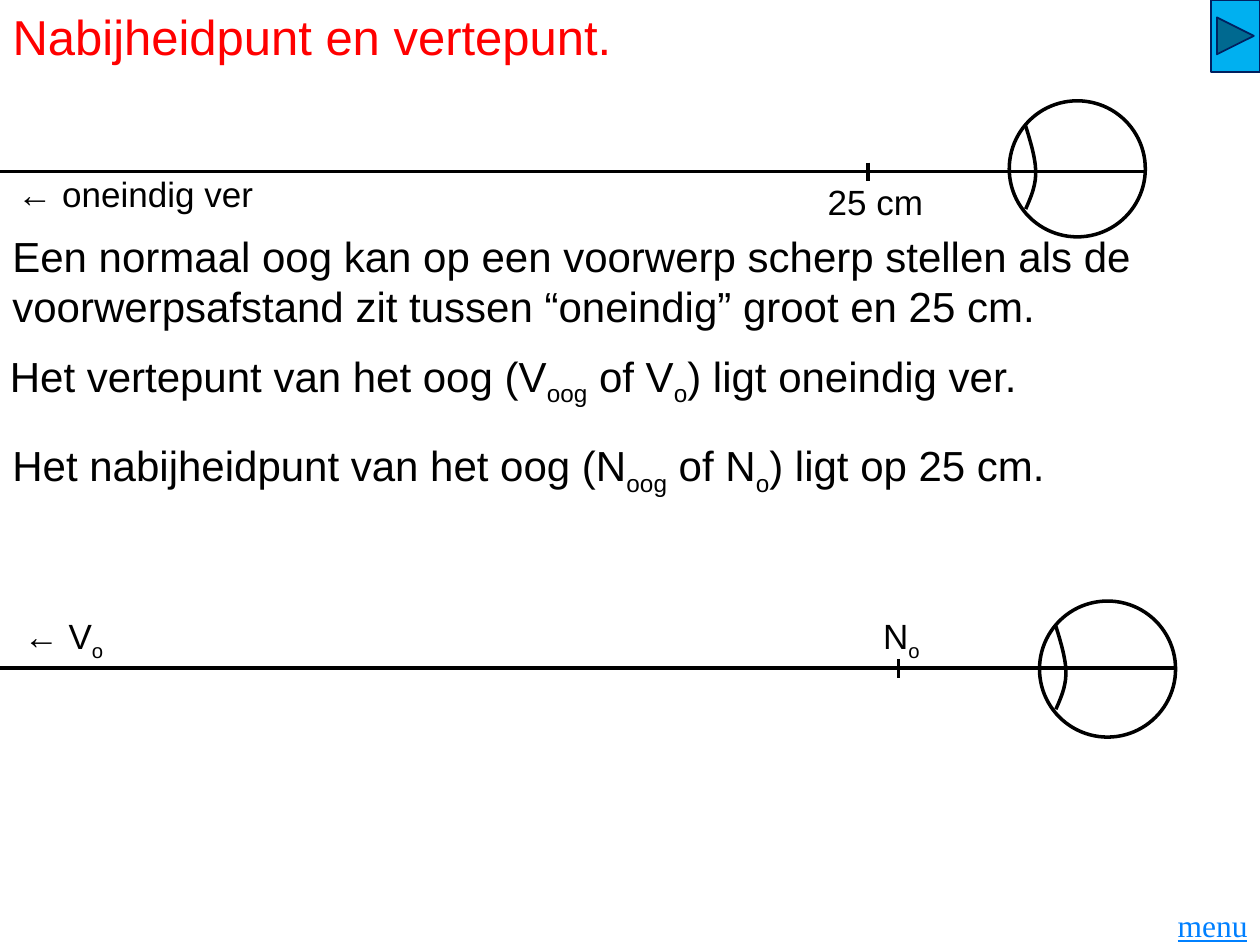
from lxml import etree
from pptx import Presentation
from pptx.dml.color import RGBColor
from pptx.enum.shapes import MSO_CONNECTOR, MSO_SHAPE
from pptx.enum.text import MSO_ANCHOR, MSO_AUTO_SIZE, PP_ALIGN
from pptx.oxml.ns import qn
from pptx.util import Inches, Pt

STRAIGHT = MSO_CONNECTOR.STRAIGHT
OVAL = MSO_SHAPE.OVAL
FORWARD_BUTTON = MSO_SHAPE.ACTION_BUTTON_FORWARD_OR_NEXT
TOP = MSO_ANCHOR.TOP
LEFT, RIGHT = PP_ALIGN.LEFT, PP_ALIGN.RIGHT
GROW, NO_FIT = MSO_AUTO_SIZE.SHAPE_TO_FIT_TEXT, MSO_AUTO_SIZE.NONE

BLACK = RGBColor(0, 0, 0)
RED = RGBColor(0xFF, 0, 0)
LINK_BLUE = RGBColor(0, 0x80, 0xFF)
BUTTON_BLUE = RGBColor(0, 0xB0, 0xF0)
NAVY = RGBColor(0, 0x20, 0x60)

EYE_SIZE = 1.08
LENS_CURVES = [
    [(0, 0), (0.04, 0.13), (0.08, 0.26), (0.08, 0.37)],
    [(0.08, 0.37), (0.08, 0.48), (0.04, 0.57), (0, 0.66)],
]
CURVE_STEPS = 12


def place(shape, box):
    shape.left, shape.top, shape.width, shape.height = (Inches(v) for v in box)


def style_font(font, size, color, name="Arial"):
    font.size, font.name = Pt(size), name
    font.color.rgb = color


def add_text(slide, box, pieces, size, color=BLACK, font_name="Arial", align=LEFT):
    """Pieces alternate between normal text and subscript."""
    label = slide.shapes.add_textbox(*(Inches(v) for v in box))
    frame = label.text_frame
    frame.word_wrap, frame.auto_size = True, GROW
    paragraph = frame.paragraphs[0]
    paragraph.alignment = align
    for index, piece in enumerate(pieces):
        run = paragraph.add_run()
        run.text = piece
        style_font(run.font, size, color, font_name)
        if index % 2:
            run.font._element.set("baseline", "-25000")
    return paragraph


def outline(shape):
    shape.shadow.inherit = False
    shape.fill.background()
    shape.line.color.rgb, shape.line.width = BLACK, Pt(2)


def add_line(slide, x1, y1, x2, y2):
    line = slide.shapes.add_connector(STRAIGHT, *(Inches(v) for v in (x1, y1, x2, y2)))
    line.line.color.rgb, line.line.width = BLACK, Pt(2)
    etree.SubElement(line._element.spPr, qn("a:effectLst"))


def bezier_point(curve, t):
    weights = ((1 - t) ** 3, 3 * t * (1 - t) ** 2, 3 * t ** 2 * (1 - t), t ** 3)
    return tuple(sum(w * p[axis] for w, p in zip(weights, curve)) for axis in (0, 1))


def add_lens(slide, left, top):
    points = [
        (Inches(left + x), Inches(top + y))
        for curve in LENS_CURVES
        for x, y in (bezier_point(curve, step / CURVE_STEPS) for step in range(CURVE_STEPS + 1))
    ]
    builder = slide.shapes.build_freeform(*points[0])
    builder.add_line_segments(points[1:], close=False)
    outline(builder.convert_to_shape())


def add_eye_diagram(slide, eye_left, eye_top, axis_y, far_label, near_label):
    tick_x = eye_left - 1.12
    add_line(slide, 0, axis_y, eye_left + 1.07, axis_y)
    add_line(slide, tick_x, axis_y - 0.07, tick_x, axis_y + 0.08)
    eye = slide.shapes.add_shape(OVAL, *(Inches(v) for v in (eye_left, eye_top, EYE_SIZE, EYE_SIZE)))
    outline(eye)
    add_lens(slide, eye_left + 0.13, eye_top + 0.2)
    for box, pieces in (far_label, near_label):
        add_text(slide, box, pieces, 20)


def add_title(slide, box):
    title = slide.shapes.title
    place(title, box)
    frame = title.text_frame
    frame.text = "Nabijheidpunt en vertepunt."
    frame.auto_size, frame.vertical_anchor = NO_FIT, TOP
    frame.paragraphs[0].alignment = LEFT
    style_font(frame.paragraphs[0].runs[0].font, 28, RED)


def add_explanation(slide):
    add_text(slide, (0, 1.78, 10, 0.91), [
        "Een normaal oog kan op een voorwerp scherp stellen als de "
        "voorwerpsafstand zit tussen “oneindig” groot en 25 cm."], 24)
    add_text(slide, (-0.02, 2.73, 10, 0.5), [
        "Het vertepunt van het oog (V", "oog", " of V", "o", ") ligt oneindig ver."], 24)
    add_text(slide, (0, 3.44, 9.88, 0.5), [
        "Het nabijheidpunt van het oog (N", "oog", " of N", "o", ") ligt op 25 cm."], 24)


def add_navigation(slide, button_box, menu_box):
    button = slide.shapes.add_shape(FORWARD_BUTTON, *(Inches(v) for v in button_box))
    button.shadow.inherit = False
    button.fill.solid()
    button.fill.fore_color.rgb = BUTTON_BLUE
    button.line.color.rgb, button.line.width = NAVY, Pt(1)
    menu = add_text(slide, menu_box, ["menu"], 18, LINK_BLUE, "Times New Roman", RIGHT)
    menu.runs[0].font.underline = True


def main():
    prs = Presentation()
    prs.slide_width, prs.slide_height = Inches(10), Inches(7.5)
    slide = prs.slides.add_slide(prs.slide_layouts[5])
    add_title(slide, (0, 0, 10, 0.57))
    add_explanation(slide)
    add_navigation(slide, (9.61, 0, 0.39, 0.57), (9.06, 7.14, 0.94, 0.4))
    add_eye_diagram(slide, 8.01, 0.8, 1.36,
                    ((0.04, 1.32, 2.83, 0.44), ["← oneindig ver"]),
                    ((6.47, 1.38, 1.08, 0.44), ["25 cm"]))
    add_eye_diagram(slide, 8.25, 4.77, 5.3,
                    ((0.09, 4.83, 0.92, 0.44), ["← V", "o"]),
                    ((6.91, 4.83, 0.92, 0.44), ["N", "o"]))
    prs.save("out.pptx")


if __name__ == "__main__":
    main()
